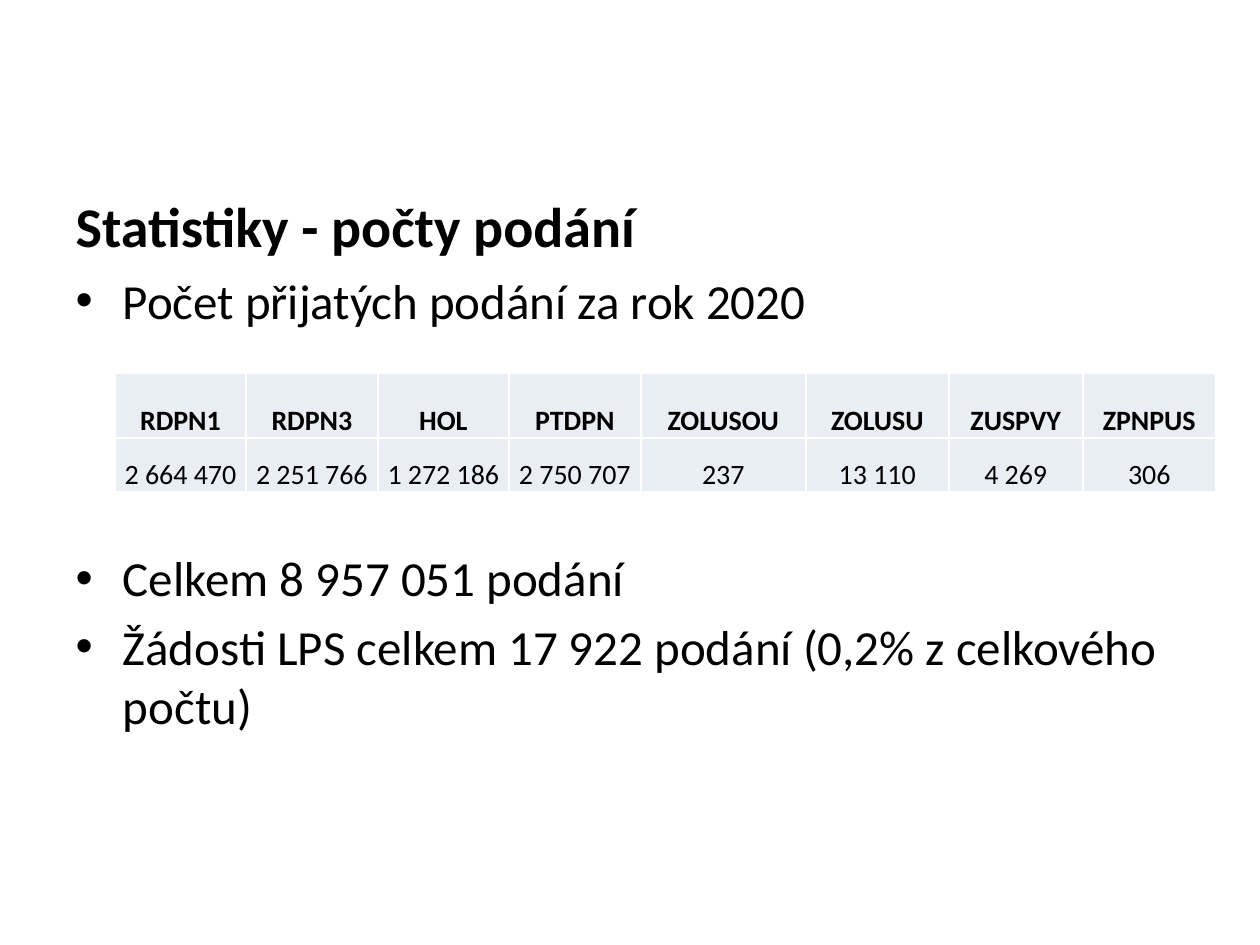
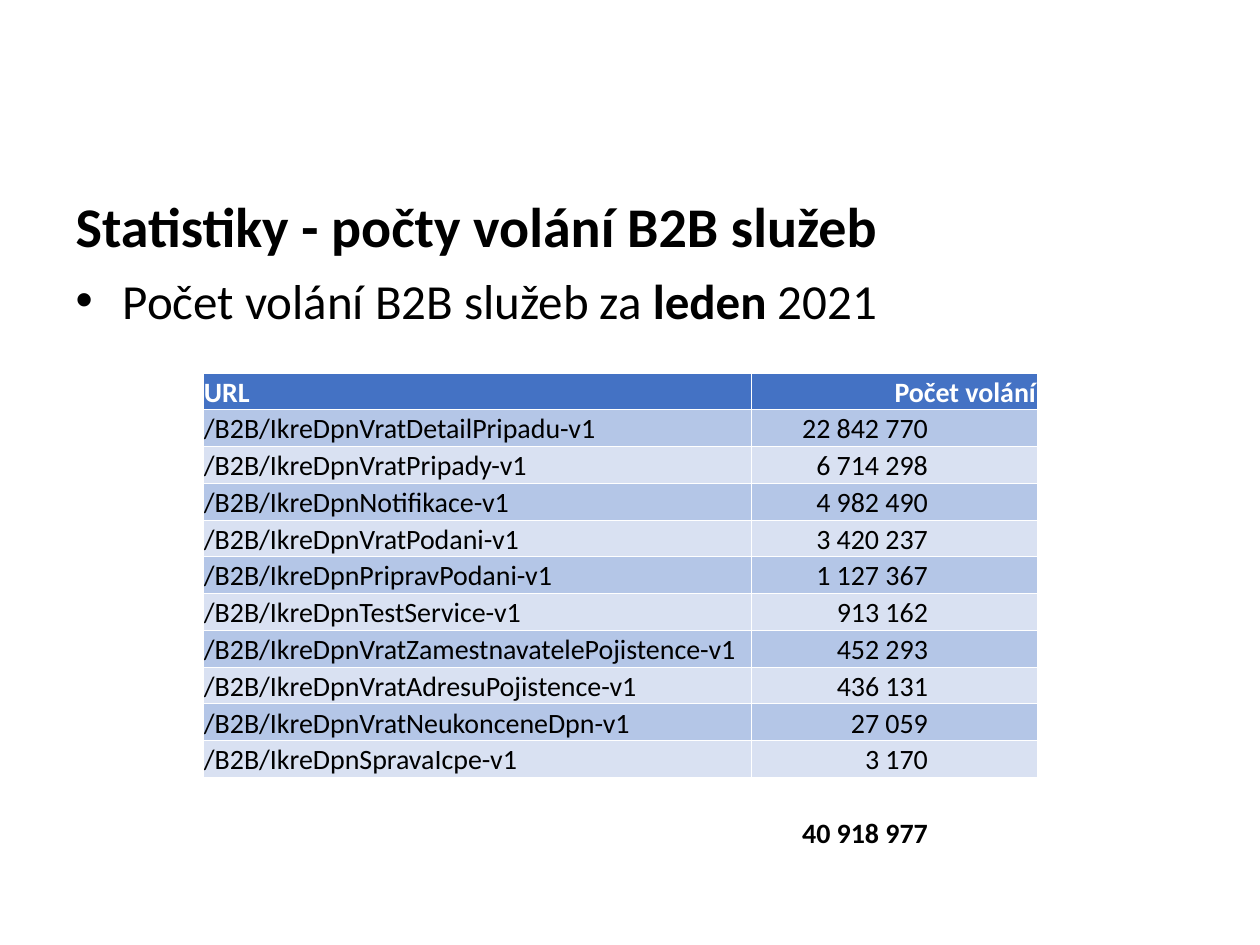
import pptx
import pptx.dml.color
import pptx.enum.text
import pptx.oxml.ns
import pptx.util
from lxml import etree

RGBColor = pptx.dml.color.RGBColor
Pt = pptx.util.Pt
PP_ALIGN = pptx.enum.text.PP_ALIGN
MSO_ANCHOR = pptx.enum.text.MSO_ANCHOR
qn = pptx.oxml.ns.qn

BLACK = RGBColor(0x00, 0x00, 0x00)
WHITE = RGBColor(0xFF, 0xFF, 0xFF)
PALE_GREY = RGBColor(0xE9, 0xED, 0xF4)
HEADER_BLUE = RGBColor(0x44, 0x72, 0xC4)
BAND_BLUES = (RGBColor(0xB4, 0xC6, 0xE7), RGBColor(0xD9, 0xE1, 0xF2))

FONT = "Calibri"
TITLE_SIZE, LIST_SIZE, CELL_SIZE = 32, 28, 16
PX_PER_INCH = 126

SUBMISSIONS = {
    "RDPN1": "2 664 470", "RDPN3": "2 251 766", "HOL": "1 272 186",
    "PTDPN": "2 750 707", "ZOLUSOU": "237", "ZOLUSU": "13 110",
    "ZUSPVY": "4 269", "ZPNPUS": "306",
}
SERVICE_CALLS = {
    "VratDetailPripadu": "22 842 770",
    "VratPripady": "6 714 298",
    "Notifikace": "4 982 490",
    "VratPodani": "3 420 237",
    "PripravPodani": "1 127 367",
    "TestService": "913 162",
    "VratZamestnavatelePojistence": "452 293",
    "VratAdresuPojistence": "436 131",
    "VratNeukonceneDpn": "27 059",
    "SpravaIcpe": "3 170",
}
TOTAL_CALLS = "40 918 977"


def px(n):
    return pptx.util.Emu(round(n * 914400 / PX_PER_INCH))


def add_text(p, text, size=CELL_SIZE, bold=False, color=BLACK):
    r = p.add_run()
    r.text = text
    r.font.name = FONT
    r.font.size = Pt(size)
    r.font.bold = bold
    r.font.color.rgb = color


class Deck:
    def __init__(self):
        self.prs = pptx.Presentation()
        self.prs.slide_width, self.prs.slide_height = px(1260), px(945)
        self.slide = None

    def add_slide(self, title):
        self.slide = self.prs.slides.add_slide(self.prs.slide_layouts[1])
        tf = self.place(self.slide.shapes.title, 185, 79)
        p = tf.paragraphs[0]
        p.alignment = PP_ALIGN.LEFT
        add_text(p, title, TITLE_SIZE, bold=True)

    def place(self, sp, top, height):
        """Put a placeholder in the content column and return its text frame."""
        sp.left, sp.top, sp.width, sp.height = px(63), px(top), px(1134), px(height)
        tf = sp.text_frame
        tf.auto_size = pptx.enum.text.MSO_AUTO_SIZE.NONE
        tf.vertical_anchor = MSO_ANCHOR.TOP
        return tf

    def add_list(self, items):
        """Each item is (space before in points, [(text, bold), ...])."""
        tf = self.place(self.slide.placeholders[1], 264, 615)
        for i, (space, runs) in enumerate(items):
            p = tf.add_paragraph() if i else tf.paragraphs[0]
            p.space_before = Pt(space)
            for text, bold in runs:
                add_text(p, text, LIST_SIZE, bold)

    def add_table(self, left, top, widths, height, row_count):
        frame = self.slide.shapes.add_table(
            row_count, len(widths), px(left), px(top), px(sum(widths)), px(height))
        table = frame.table
        table.first_row = table.horz_banding = False
        for column, width in zip(table.columns, widths):
            column.width = px(width)
        return table

    def fill_cell(self, cell, text, fill=None, align=PP_ALIGN.LEFT, inset=0,
                  right=None, border=1, **fmt):
        cell.vertical_anchor = MSO_ANCHOR.BOTTOM
        cell.margin_left = cell.margin_top = px(inset)
        cell.margin_right = px(inset if right is None else right)
        cell.margin_bottom = 0
        p = cell.text_frame.paragraphs[0]
        p.alignment = align
        if text:
            add_text(p, text, **fmt)
        else:
            etree.SubElement(p._p, qn("a:endParaRPr"), sz=str(CELL_SIZE * 100))
        self.set_borders(cell, border)
        if fill is None:
            cell.fill.background()
        else:
            cell.fill.solid()
            cell.fill.fore_color.rgb = fill

    def set_borders(self, cell, width):
        tc_pr = cell._tc.get_or_add_tcPr()
        for side in "LRTB":
            ln = etree.SubElement(tc_pr, qn(f"a:ln{side}"), w=str(Pt(width)))
            solid = etree.SubElement(ln, qn("a:solidFill"))
            etree.SubElement(solid, qn("a:srgbClr"), val=str(WHITE))


def build_submissions(deck):
    deck.add_slide("Statistiky - počty podání")
    deck.add_list([
        (0, [("Počet přijatých podání za rok 2020", False)]),
        (125, [("Celkem 8 957 051 podání", False)]),
        (5.6, [("Žádosti LPS celkem 17 922 podání (0,2% z celkového počtu)", False)]),
    ])
    widths = [131, 132, 131, 132, 165, 143, 134, 133]
    table = deck.add_table(115, 373, widths, 119, 2)
    table.rows[0].height, table.rows[1].height = px(65), px(54)
    for col, pair in enumerate(SUBMISSIONS.items()):
        for row, text in enumerate(pair):
            deck.fill_cell(table.cell(row, col), text, PALE_GREY,
                           PP_ALIGN.CENTER, bold=row == 0)


def build_service_calls(deck):
    deck.add_slide("Statistiky - počty volání B2B služeb")
    deck.add_list([
        (0, [("Počet volání B2B služeb za ", False), ("leden", True), (" 2021", False)]),
    ])
    header = {"fill": HEADER_BLUE, "bold": True, "color": WHITE}
    rows = [("URL", "Počet volání", header)]
    for i, (name, count) in enumerate(SERVICE_CALLS.items()):
        rows.append((f"/B2B/IkreDpn{name}-v1", count, {"fill": BAND_BLUES[i % 2]}))
    rows += [("", "", {}), ("", TOTAL_CALLS, {"bold": True})]

    table = deck.add_table(203, 373, [548, 286], 478, len(rows))
    for row, (url, count, fmt) in enumerate(rows):
        deck.fill_cell(table.cell(row, 0), url, inset=1, border=0.5, **fmt)
        deck.fill_cell(table.cell(row, 1), count, align=PP_ALIGN.RIGHT, inset=1,
                       right=109 if row else 1, border=0.5, **fmt)


def main():
    deck = Deck()
    build_submissions(deck)
    build_service_calls(deck)
    deck.prs.save("out.pptx")


if __name__ == "__main__":
    main()
